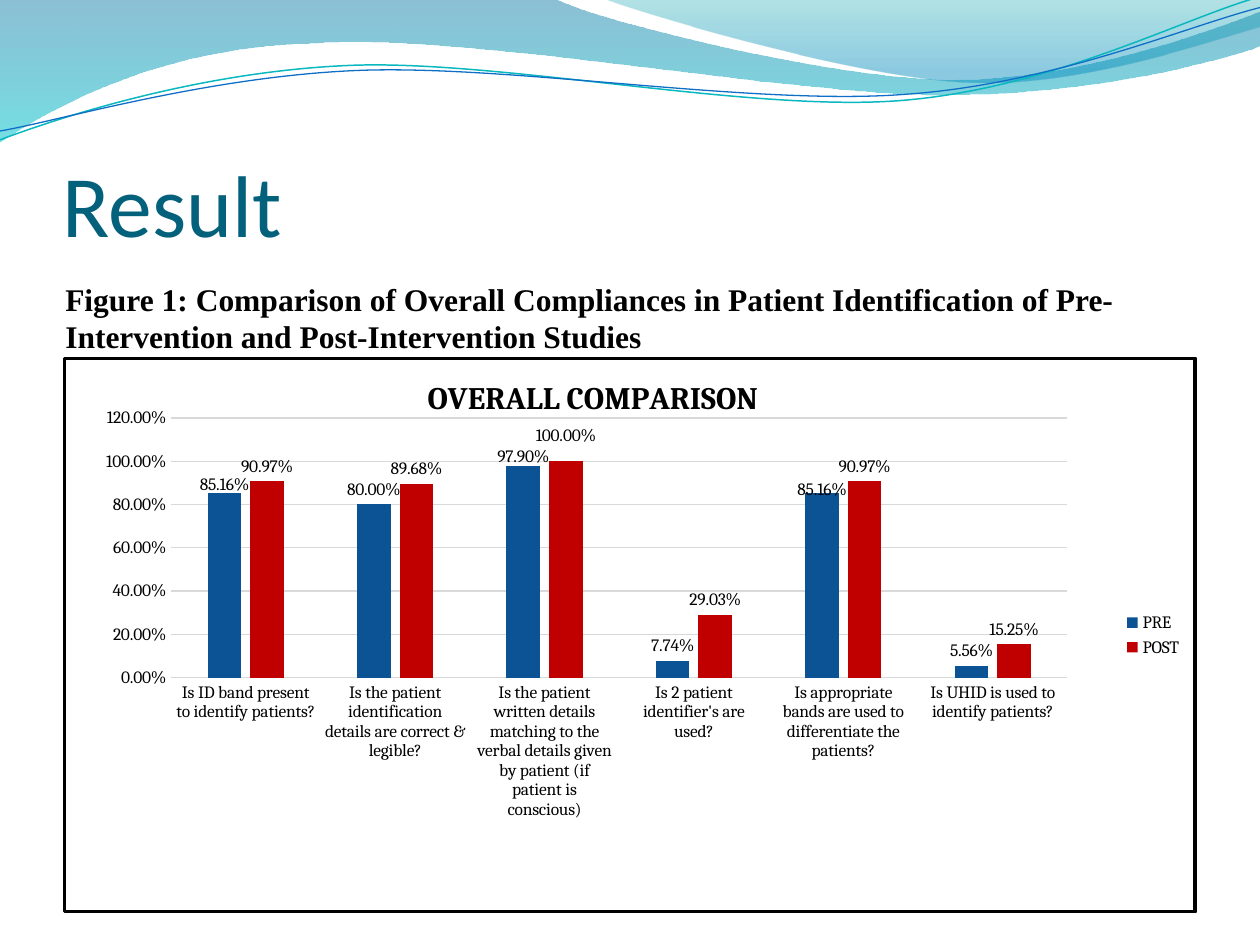
from dataclasses import dataclass

from lxml import etree
from pptx import Presentation
from pptx.chart.chart import Chart
from pptx.chart.data import CategoryChartData
from pptx.dml.color import RGBColor
from pptx.enum.chart import XL_CHART_TYPE, XL_LABEL_POSITION, XL_LEGEND_POSITION, XL_TICK_MARK
from pptx.enum.text import MSO_ANCHOR
from pptx.oxml import parse_xml
from pptx.oxml.ns import nsdecls, qn
from pptx.slide import Slide
from pptx.util import Inches, Pt

COLUMN = XL_CHART_TYPE.COLUMN_CLUSTERED
OUTSIDE_END = XL_LABEL_POSITION.OUTSIDE_END
LEGEND_RIGHT = XL_LEGEND_POSITION.RIGHT
NO_TICK = XL_TICK_MARK.NONE
TOP, BOTTOM = MSO_ANCHOR.TOP, MSO_ANCHOR.BOTTOM
PERCENT = "0.00%"

Point = tuple[float, float]


@dataclass(frozen=True)
class Theme:
    heading: str = "04617B"
    text: str = "000000"
    background: str = "FFFFFF"
    grid: str = "D9D9D9"
    pre: str = "0B5394"
    post: str = "C00000"
    heading_font: str = "Calibri"
    caption_font: str = "Times New Roman"
    chart_font: str = "Cambria"
    heading_size: int = 50
    caption_size: int = 18
    chart_title_size: int = 18
    chart_size: int = 10


@dataclass(frozen=True)
class GradientStop:
    position: float
    color: str
    opacity: int


@dataclass(frozen=True)
class Wave:
    start: Point
    segments: list[tuple[Point, ...]]
    stops: tuple[GradientStop, ...] = ()
    line_color: str = ""
    line_width: float = 0


@dataclass(frozen=True)
class TextBlock:
    text: str
    box: tuple[float, float, float, float]
    font: str
    size: int
    color: str
    bold: bool = False
    anchor: MSO_ANCHOR = TOP
    margins: tuple[float, float, float, float] = (0.1, 0.05, 0.1, 0.05)


@dataclass(frozen=True)
class Series:
    name: str
    values: tuple[float, ...]
    color: str
    label_shifts: dict[int, Point]


THEME = Theme()

WAVES = [
    Wave((0, 0), [
        ((4.4, -0.01),),
        ((4.76, 0.17), (6.64, 0.63), (7.58, 0.63)),
        ((8.53, 0.63), (9.58, 0.26), (10, 0.09)),
        ((10.01, 0.36),),
        ((9.83, 0.44), (8.7, 0.76), (7.46, 0.75)),
        ((6.22, 0.75), (3.82, 0.28), (2.57, 0.34)),
        ((1.29, 0.36), (0.46, 0.83), (-0.01, 1.13)),
        ((0, 0),),
    ], stops=(GradientStop(0, "0074A1", 45), GradientStop(1, "00C6CF", 55))),
    Wave((4.79, -0.01), [
        ((5.09, 0.11), (6.82, 0.62), (7.69, 0.65)),
        ((8.56, 0.69), (9.61, 0.32), (10, 0.21)),
        ((10, 0),),
        ((4.79, -0.01),),
    ], stops=(GradientStop(0, "00A1A9", 30), GradientStop(0.8, "008BBF", 45))),
    Wave((0, 1.11), [
        ((0.48, 0.93), (1.58, 0.57), (2.77, 0.52)),
        ((3.95, 0.47), (5.93, 0.89), (7.13, 0.8)),
        ((8.33, 0.71), (9.38, 0.15), (9.98, -0.02)),
    ], line_color="0AB8BF", line_width=0.85),
    Wave((0, 1.04), [
        ((0.47, 0.96), (1.64, 0.61), (2.83, 0.56)),
        ((4.03, 0.51), (5.97, 0.84), (7.17, 0.75)),
        ((8.36, 0.67), (9.41, 0.21), (10, 0.06)),
    ], line_color="0F6FC6", line_width=0.75),
]

HEADING = TextBlock("Result", (0.5, 0.77, 9, 1.25), THEME.heading_font, THEME.heading_size,
                    THEME.heading, anchor=BOTTOM, margins=(0, 0.05, 0, 0))
CAPTION = TextBlock(
    "Figure 1: Comparison of Overall Compliances in Patient Identification of "
    "Pre-Intervention and Post-Intervention Studies",
    (0.42, 2.17, 9, 0.71), THEME.caption_font, THEME.caption_size, THEME.text, bold=True)

CATEGORIES = [
    "Is ID band present to identify patients?",
    "Is the patient identification details are correct & legible?",
    "Is the patient written details matching to the verbal details given by patient "
    "(if patient is conscious)",
    "Is 2 patient identifier's are used?",
    "Is appropriate bands are used to differentiate the patients?",
    "Is UHID is used to identify patients?",
]
SERIES = [
    Series("PRE", (0.8516, 0.8, 0.979, 0.0774, 0.8516, 0.0556), THEME.pre,
           {0: (0, 0.01), 2: (0, 0.01), 4: (0, 0.02)}),
    Series("POST", (0.9097, 0.8968, 1, 0.2903, 0.9097, 0.1525), THEME.post, {2: (0, -0.02)}),
]


def bend(outline: etree.ElementBase, segments: list[tuple[Point, ...]]) -> None:
    lines = iter(outline.findall(qn("a:lnTo")))
    for segment in segments:
        group = [next(lines) for _ in segment]
        if len(group) == 3:
            curve = parse_xml(f'<a:cubicBezTo {nsdecls("a")}/>')
            group[0].addprevious(curve)
            for line in group:
                curve.append(line[0])
                outline.remove(line)


def draw_wave(slide: Slide, wave: Wave) -> None:
    points = [wave.start, *(point for segment in wave.segments for point in segment)]
    corners = [(Inches(x), Inches(y)) for x, y in points]
    builder = slide.shapes.build_freeform(*corners[0])
    builder.add_line_segments(corners[1:], close=bool(wave.stops))
    shape = builder.convert_to_shape()
    bend(next(shape.element.iter(qn("a:path"))), wave.segments)
    shape.shadow.inherit = False
    if not wave.stops:
        shape.fill.background()
        shape.line.color.rgb = RGBColor.from_string(wave.line_color)
        shape.line.width = Pt(wave.line_width)
        return
    shape.line.fill.background()
    shape.fill.gradient()
    shape.fill.gradient_angle = 270
    for target, stop in zip(shape.fill.gradient_stops, wave.stops):
        target.position = stop.position
        target.color.rgb = RGBColor.from_string(stop.color)
    for color, stop in zip(shape.element.spPr.iter(qn("a:srgbClr")), wave.stops):
        etree.SubElement(color, qn("a:alpha"), val=str(stop.opacity * 1000))


def draw_text(slide: Slide, block: TextBlock) -> None:
    frame = slide.shapes.add_textbox(*map(Inches, block.box)).text_frame
    frame.word_wrap = True
    frame.vertical_anchor = block.anchor
    frame.margin_left, frame.margin_top, frame.margin_right, frame.margin_bottom = map(
        Inches, block.margins)
    run = frame.paragraphs[0].add_run()
    run.text = block.text
    run.font.name, run.font.size, run.font.bold = block.font, Pt(block.size), block.bold
    run.font.color.rgb = RGBColor.from_string(block.color)


def place(parent: etree.ElementBase, index: int, **settings: str | float) -> None:
    for existing in parent.findall(qn("c:layout")):
        parent.remove(existing)
    values = "".join(f'<c:{name} val="{value}"/>' for name, value in settings.items())
    parent.insert(index, parse_xml(
        f'<c:layout {nsdecls("c")}><c:manualLayout>{values}</c:manualLayout></c:layout>'))


def style_chart(chart: Chart) -> None:
    chart.font.name, chart.font.size = THEME.chart_font, Pt(THEME.chart_size)
    chart.font.color.rgb = RGBColor.from_string(THEME.text)
    chart.has_title = True
    run = chart.chart_title.text_frame.paragraphs[0].add_run()
    run.text = "OVERALL COMPARISON"
    run.font.name, run.font.size, run.font.bold = THEME.chart_font, Pt(THEME.chart_title_size), True
    run.font.color.rgb = RGBColor.from_string(THEME.text)
    chart.has_legend = True
    chart.legend.position, chart.legend.include_in_layout = LEGEND_RIGHT, False
    value_axis, category_axis = chart.value_axis, chart.category_axis
    for axis in (value_axis, category_axis):
        axis.major_tick_mark = axis.minor_tick_mark = NO_TICK
    value_axis.tick_labels.number_format = PERCENT
    value_axis.tick_labels.number_format_is_linked = False
    value_axis.format.line.fill.background()
    for line in (value_axis.major_gridlines.format.line, category_axis.format.line):
        line.color.rgb, line.width = RGBColor.from_string(THEME.grid), Pt(0.75)
    space = chart.element
    space.find(qn("c:chart")).addnext(parse_xml(
        f'<c:spPr {nsdecls("c", "a")}><a:solidFill><a:srgbClr val="{THEME.background}"/></a:solidFill>'
        f'<a:ln w="{Pt(2)}"><a:solidFill><a:srgbClr val="{THEME.text}"/></a:solidFill></a:ln></c:spPr>'))
    edges = {"xMode": "edge", "yMode": "edge"}
    place(next(space.iter(qn("c:title"))), 1, **edges, x=0.316, y=0.024)
    place(next(space.iter(qn("c:plotArea"))), 0, layoutTarget="inner", **edges,
          x=0.094, y=0.108, w=0.793, h=0.469)


def draw_chart(slide: Slide) -> None:
    data = CategoryChartData(number_format=PERCENT)
    data.categories = CATEGORIES
    for series in SERIES:
        data.add_series(series.name, series.values)
    chart = slide.shapes.add_chart(COLUMN, *map(Inches, (0.5, 2.83, 9, 4.42)), data).chart
    style_chart(chart)
    plot = chart.plots[0]
    plot.gap_width, plot.overlap, plot.vary_by_categories = 219, -27, False
    for drawn, series in zip(plot.series, SERIES):
        drawn.format.fill.solid()
        drawn.format.fill.fore_color.rgb = RGBColor.from_string(series.color)
        labels = drawn.data_labels
        labels.show_value, labels.position = True, OUTSIDE_END
        labels.number_format, labels.number_format_is_linked = PERCENT, False
        for index in series.label_shifts:
            drawn.points[index].data_label.position = OUTSIDE_END
        for label, (x, y) in zip(drawn._element.iter(qn("c:dLbl")), series.label_shifts.values()):
            place(label, 1, x=x, y=y)
    for leader in chart.element.iter(qn("c:showLeaderLines")):
        leader.set("val", "0")


def main() -> None:
    """Build the patient identification result slide."""
    presentation = Presentation()
    presentation.slide_width, presentation.slide_height = Inches(10), Inches(7.5)
    slide = presentation.slides.add_slide(presentation.slide_layouts[6])
    for wave in WAVES:
        draw_wave(slide, wave)
    draw_text(slide, HEADING)
    draw_chart(slide)
    draw_text(slide, CAPTION)
    presentation.save("out.pptx")


if __name__ == "__main__":
    main()
